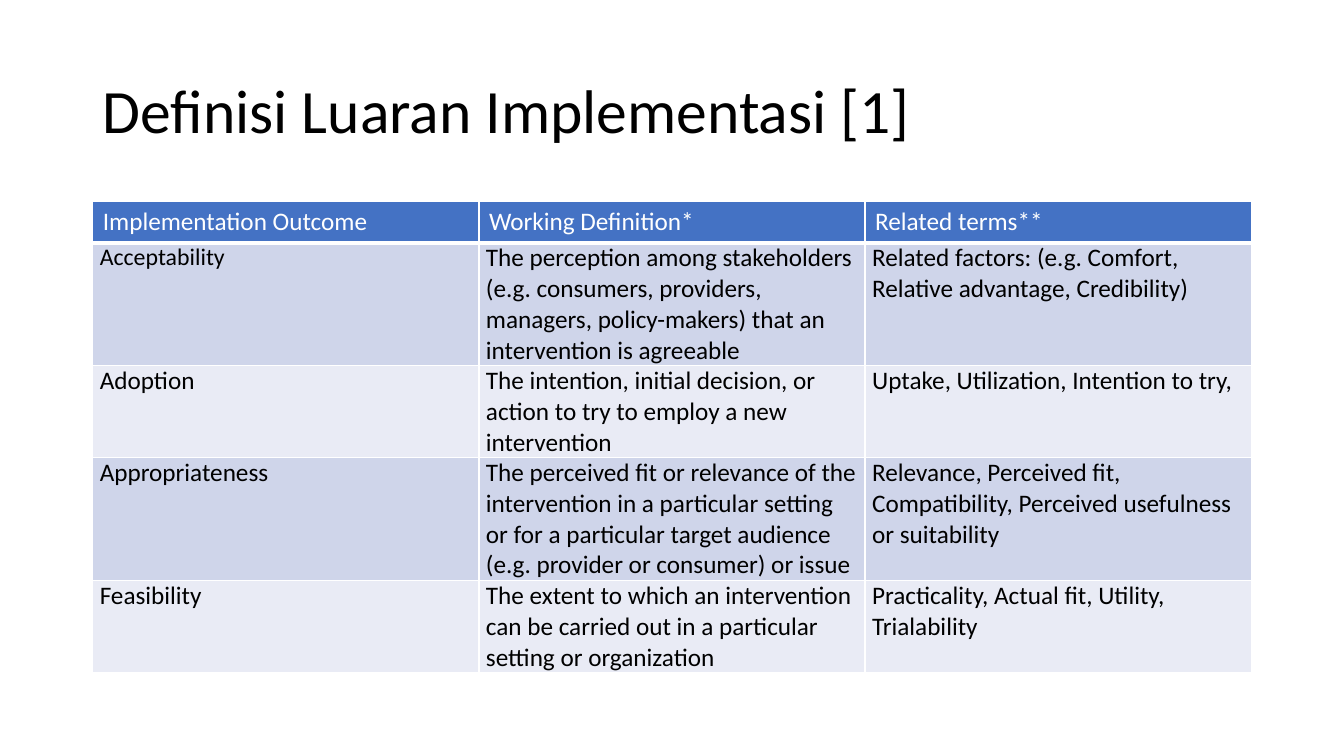
from pptx import Presentation
from pptx.dml.color import RGBColor
from pptx.enum.text import MSO_ANCHOR
from pptx.oxml import parse_xml
from pptx.oxml.ns import nsdecls
from pptx.util import Inches, Pt

FONT = "Calibri"
BLACK, WHITE = "000000", "FFFFFF"
HEADER_FILL = "4472C4"
BAND_FILLS = ("CFD5EA", "E9EBF5")
HEADERS = ("Implementation Outcome", "Working Definition*", "Related terms**")
OUTCOMES = (
    ("Acceptability",
     "The perception among stakeholders (e.g. consumers, providers, managers, "
     "policy-makers) that an intervention is agreeable",
     "Related factors: (e.g. Comfort, Relative advantage, Credibility)"),
    ("Adoption",
     "The intention, initial decision, or action to try to employ a new intervention",
     "Uptake, Utilization, Intention to try,"),
    ("Appropriateness",
     "The perceived fit or relevance of the intervention in a particular setting or "
     "for a particular target audience (e.g. provider or consumer) or issue",
     "Relevance, Perceived fit, Compatibility, Perceived usefulness or suitability"),
    ("Feasibility",
     "The extent to which an intervention can be carried out in a particular setting "
     "or organization",
     "Practicality, Actual fit, Utility, Trialability"),
)
HEADER_HEIGHT = 0.41
OUTCOME_HEIGHTS = (1.22, 0.91, 1.22, 0.91)
COLUMN_WIDTH = 3.83


def color(value):
    return RGBColor.from_string(value)


def add_run(paragraph, text, size, text_color):
    run = paragraph.add_run()
    run.text = text
    run.font.name = FONT
    run.font.size = Pt(size)
    run.font.bold = False
    run.font.color.rgb = color(text_color)


def add_title(slide, text):
    box = slide.shapes.add_textbox(Inches(0.92), Inches(0.4), Inches(11.5), Inches(1.45))
    frame = box.text_frame
    frame.word_wrap = True
    frame.vertical_anchor = MSO_ANCHOR.MIDDLE
    paragraph = frame.paragraphs[0]
    paragraph.line_spacing = 0.9
    add_run(paragraph, text, 44, BLACK)


def set_borders(cell, bottom_width):
    """Draw white cell borders: 1 pt, apart from the bottom one."""
    properties = cell._tc.get_or_add_tcPr()
    for side, width in (("L", 1), ("R", 1), ("T", 1), ("B", bottom_width)):
        properties.append(parse_xml(
            f'<a:ln{side} {nsdecls("a")} w="{Pt(width)}"><a:solidFill>'
            f'<a:srgbClr val="{WHITE}"/></a:solidFill></a:ln{side}>'))


def fill_cell(cell, text, size, text_color, fill, bottom_width=1):
    set_borders(cell, bottom_width)
    cell.fill.solid()
    cell.fill.fore_color.rgb = color(fill)
    add_run(cell.text_frame.paragraphs[0], text, size, text_color)


def add_outcome_table(slide):
    heights = (HEADER_HEIGHT, *OUTCOME_HEIGHTS)
    table = slide.shapes.add_table(
        len(heights), len(HEADERS), Inches(0.92), Inches(2),
        Inches(COLUMN_WIDTH * len(HEADERS)), Inches(sum(heights))).table
    for row, height in zip(table.rows, heights):
        row.height = Inches(height)
    for column, header in enumerate(HEADERS):
        fill_cell(table.cell(0, column), header, 18, WHITE, HEADER_FILL, bottom_width=3)
    for row, outcome in enumerate(OUTCOMES, start=1):
        for column, text in enumerate(outcome):
            cell = table.cell(row, column)
            cell.margin_left = cell.margin_right = Inches(0.07)
            cell.margin_top = cell.margin_bottom = 0
            size = 17 if text == "Acceptability" else 18
            fill_cell(cell, text, size, BLACK, BAND_FILLS[(row - 1) % 2])


def main():
    presentation = Presentation()
    presentation.slide_width = Inches(13.33)
    presentation.slide_height = Inches(7.5)
    slide = presentation.slides.add_slide(presentation.slide_layouts[6])
    add_title(slide, "Definisi Luaran Implementasi [1]")
    add_outcome_table(slide)
    presentation.save("out.pptx")


if __name__ == "__main__":
    main()
